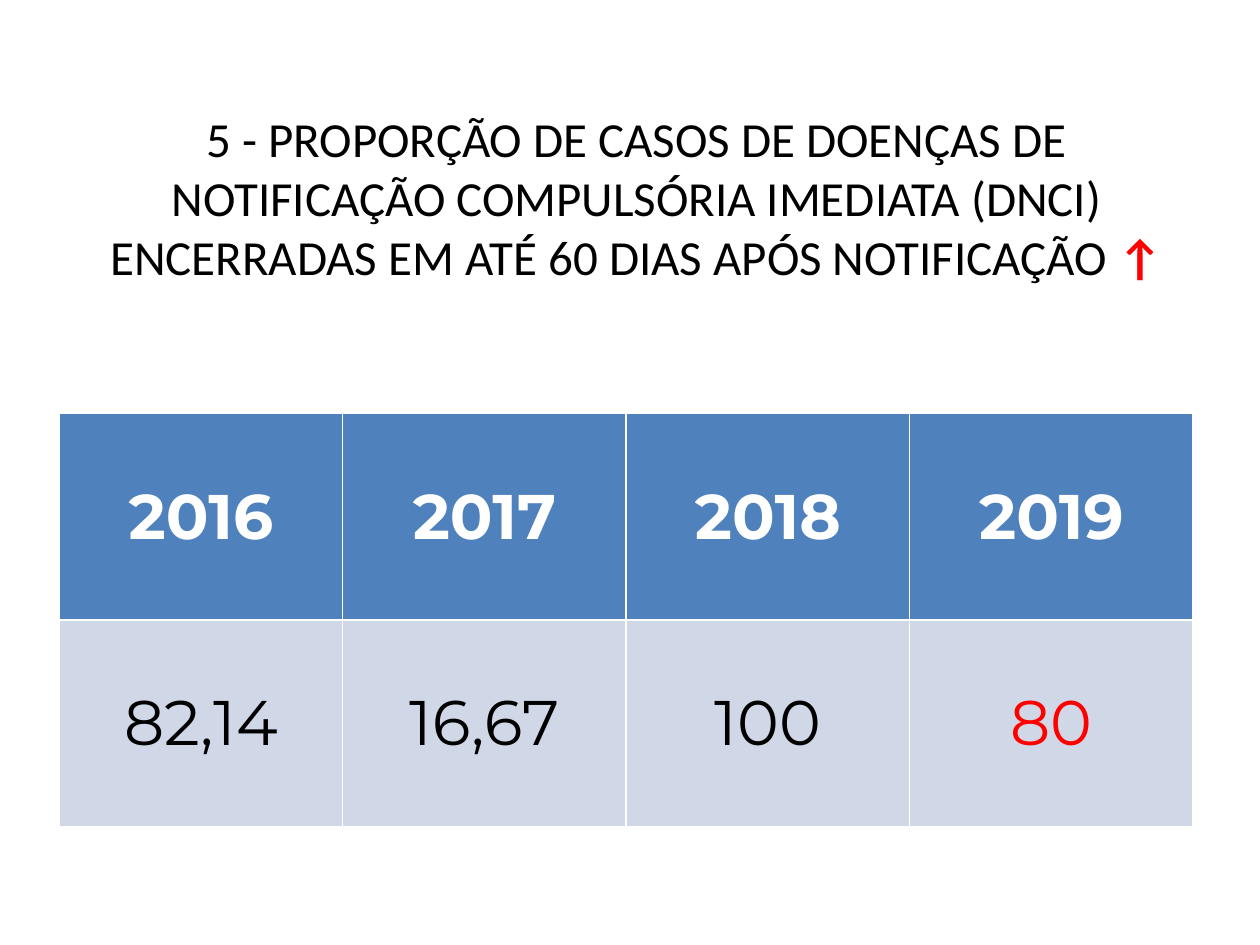
from dataclasses import dataclass

import pptx
import pptx.dml.color
import pptx.enum.text
import pptx.text.text
import pptx.util

RGBColor = pptx.dml.color.RGBColor
BLACK = RGBColor(0x00, 0x00, 0x00)
WHITE = RGBColor(0xFF, 0xFF, 0xFF)
RED = RGBColor(0xFF, 0x00, 0x00)
HEADER_BLUE = RGBColor(0x4F, 0x81, 0xBD)
PALE_BLUE = RGBColor(0xD0, 0xD8, 0xE8)

SLIDE_WIDTH = pptx.util.Inches(10)
SLIDE_HEIGHT = pptx.util.Inches(7.5)


@dataclass(frozen=True)
class YearResult:
    year: str
    percentage: str
    color: RGBColor = BLACK


RESULTS = (
    YearResult("2016", "82,14"),
    YearResult("2017", "16,67"),
    YearResult("2018", "100"),
    YearResult("2019", "80", RED),
)


def write_text(paragraph: pptx.text.text._Paragraph, text: str, *, font: str,
               size: float, color: RGBColor, bold: bool = False) -> None:
    """Append one formatted run to a centred paragraph."""
    paragraph.alignment = pptx.enum.text.PP_ALIGN.CENTER
    run = paragraph.add_run()
    run.text = text
    run.font.name = font
    run.font.size = pptx.util.Pt(size)
    run.font.color.rgb = color
    run.font.bold = bold


def fill_cell(cell, text: str, *, background: RGBColor, color: RGBColor,
              bold: bool = False) -> None:
    cell.fill.solid()
    cell.fill.fore_color.rgb = background
    cell.vertical_anchor = pptx.enum.text.MSO_ANCHOR.MIDDLE
    write_text(cell.text_frame.paragraphs[0], text, font="Montserrat",
               size=36, color=color, bold=bold)


def add_heading(slide) -> None:
    heading = slide.shapes.add_textbox(
        pptx.util.Inches(0.55), pptx.util.Inches(0.16),
        int(SLIDE_WIDTH * 0.9), pptx.util.Inches(2.81)).text_frame
    heading.word_wrap = True
    heading.vertical_anchor = pptx.enum.text.MSO_ANCHOR.MIDDLE
    indicator = heading.paragraphs[0]
    write_text(indicator,
               "5 - PROPORÇÃO DE CASOS DE DOENÇAS DE NOTIFICAÇÃO COMPULSÓRIA "
               "IMEDIATA (DNCI) ENCERRADAS EM ATÉ 60 DIAS APÓS NOTIFICAÇÃO ",
               font="Calibri", size=28, color=BLACK)
    write_text(indicator, "↑", font="Calibri", size=28, color=RED, bold=True)


def add_results(slide, results: tuple[YearResult, ...]) -> None:
    # The default table style supplies the white rules between cells
    grid = slide.shapes.add_table(
        2, len(results), pptx.util.Inches(0.47), pptx.util.Inches(3.28),
        int(SLIDE_WIDTH * 0.9), pptx.util.Inches(3.28)).table
    for column, result in enumerate(results):
        fill_cell(grid.cell(0, column), result.year,
                  background=HEADER_BLUE, color=WHITE, bold=True)
        fill_cell(grid.cell(1, column), result.percentage,
                  background=PALE_BLUE, color=result.color)


def main() -> None:
    presentation = pptx.Presentation()
    presentation.slide_width = SLIDE_WIDTH
    presentation.slide_height = SLIDE_HEIGHT
    slide = presentation.slides.add_slide(presentation.slide_layouts[6])

    # Indicator title with its trend arrow
    add_heading(slide)
    # Yearly percentages
    add_results(slide, RESULTS)

    presentation.save("out.pptx")


if __name__ == "__main__":
    main()
